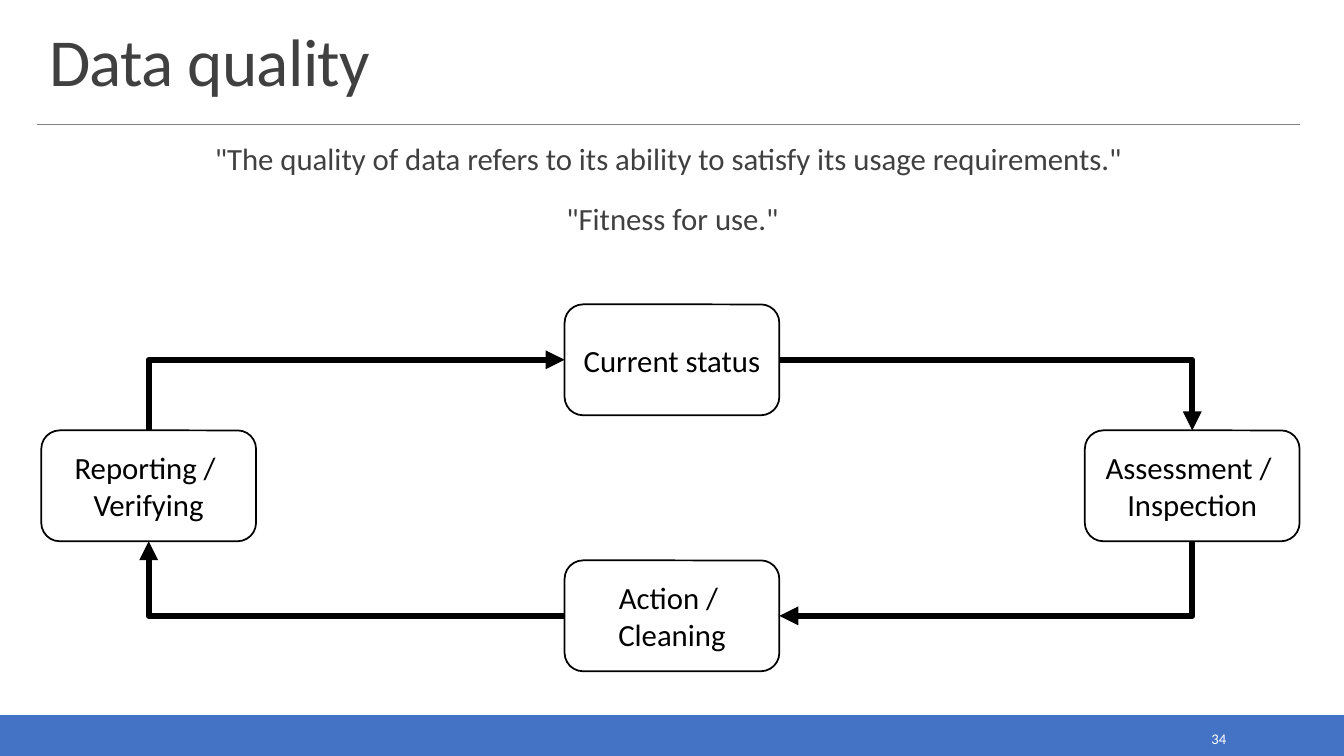
from pptx import Presentation
from pptx.dml.color import RGBColor
from pptx.enum.shapes import MSO_CONNECTOR, MSO_SHAPE
from pptx.enum.text import MSO_ANCHOR, PP_ALIGN
from pptx.oxml.ns import qn
from pptx.util import Inches, Pt
from lxml import etree

ELBOW, STRAIGHT = MSO_CONNECTOR.ELBOW, MSO_CONNECTOR.STRAIGHT
RECT, ROUND_RECT = MSO_SHAPE.RECTANGLE, MSO_SHAPE.ROUNDED_RECTANGLE
CENTER, LEFT, RIGHT = PP_ALIGN.CENTER, PP_ALIGN.LEFT, PP_ALIGN.RIGHT
TOP, MIDDLE, BOTTOM = MSO_ANCHOR.TOP, MSO_ANCHOR.MIDDLE, MSO_ANCHOR.BOTTOM

FONT = "Calibri"
BLACK = RGBColor(0, 0, 0)
WHITE = RGBColor(0xFF, 0xFF, 0xFF)
DARK = RGBColor(0x40, 0x40, 0x40)
GRAY = RGBColor(0x80, 0x80, 0x80)
BLUE = RGBColor(0x44, 0x72, 0xC4)

SLIDE_W, SLIDE_H = 13.33, 7.5
BOX_W, BOX_H = 2.13, 1.1
SITE_TOP, SITE_LEFT, SITE_BOTTOM, SITE_RIGHT = range(4)


def write(sp, text, size, color, align, anchor):
    """Fill a shape with one paragraph; newlines become line breaks."""
    tf = sp.text_frame
    tf.word_wrap = True
    tf.vertical_anchor = anchor
    p = tf.paragraphs[0]
    p.alignment = align
    for i, line in enumerate(text.split("\n")):
        if i:
            p.add_line_break()
        r = p.add_run()
        r.text = line
        r.font.name, r.font.size = FONT, Pt(size)
        r.font.color.rgb = color
    return p


def add_text(s, box, text, size, color, align, anchor):
    tb = s.shapes.add_textbox(*map(Inches, box))
    return tb, write(tb, text, size, color, align, anchor)


def add_line(s, kind, color, width, ends=(0, 0, 0, 0)):
    c = s.shapes.add_connector(kind, *map(Inches, ends))
    c.line.color.rgb, c.line.width = color, Pt(width)
    etree.SubElement(c.element.spPr, qn("a:effectLst"))
    return c


def add_header(s, x, y, w, h):
    _, p = add_text(s, (x, y, w, h), "Data quality", 48, DARK, LEFT, BOTTOM)
    p.line_spacing = 0.85
    p.runs[0].font._element.set("spc", "-50")
    add_line(s, STRAIGHT, GRAY, 0.5, (0.37, 1.23, 12.89, 1.23))


def add_quote(s, x, y, text):
    tb, p = add_text(s, (x, y, 12.52, 0.47), text, 22, DARK, CENTER, TOP)
    tf = tb.text_frame
    tf.margin_left = tf.margin_right = 0
    tf.margin_top = tf.margin_bottom = Inches(0.04)
    p.line_spacing = 0.9
    p.space_before, p.space_after = Pt(12), Pt(2)


def add_step(s, x, y, text):
    sp = s.shapes.add_shape(ROUND_RECT, *map(Inches, (x, y, BOX_W, BOX_H)))
    sp.shadow.inherit = False
    sp.fill.background()
    sp.line.color.rgb, sp.line.width = BLACK, Pt(1.25)
    write(sp, text, 22, BLACK, CENTER, MIDDLE)
    return sp


def add_arrow(s, start, start_site, end, end_site):
    """Join two steps by an arrow with a single right-angled bend."""
    c = add_line(s, ELBOW, BLACK, 4.5)
    c.begin_connect(start, start_site)
    c.end_connect(end, end_site)
    spPr = c.element.spPr
    spPr.find(qn("a:prstGeom")).set("prst", "bentConnector2")
    if start_site in (SITE_TOP, SITE_BOTTOM):
        # The preset leaves sideways, so a vertical start needs a quarter turn.
        dx, dy = c.end_x - c.begin_x, c.end_y - c.begin_y
        mid_x, mid_y = c.begin_x + dx // 2, c.begin_y + dy // 2
        c.begin_x, c.begin_y = mid_x - dy // 2, mid_y + dx // 2
        c.end_x, c.end_y = mid_x + dy // 2, mid_y - dx // 2
        spPr.find(qn("a:xfrm")).set("rot", "5400000")
    ln = c.line._get_or_add_ln()
    etree.SubElement(ln, qn("a:tailEnd"), type="triangle")


def add_cycle(s, x, y, w, h):
    mid_x, right = (SLIDE_W - BOX_W) / 2, x + w - BOX_W
    side_y = y + 1.25
    reporting = add_step(s, x, side_y, "Reporting / \nVerifying")
    status = add_step(s, mid_x, y, "Current status")
    assessment = add_step(s, right, side_y, "Assessment / \nInspection")
    action = add_step(s, mid_x, y + h - BOX_H, "Action / \nCleaning")
    add_arrow(s, reporting, SITE_TOP, status, SITE_LEFT)
    add_arrow(s, status, SITE_RIGHT, assessment, SITE_TOP)
    add_arrow(s, action, SITE_LEFT, reporting, SITE_BOTTOM)
    add_arrow(s, assessment, SITE_BOTTOM, action, SITE_RIGHT)


def add_footer(s, x, y, w, h):
    bar = s.shapes.add_shape(RECT, *map(Inches, (x, y, w, h)))
    bar.shadow.inherit = False
    bar.fill.solid()
    bar.fill.fore_color.rgb = BLUE
    bar.line.color.rgb, bar.line.width = BLUE, Pt(1.25)
    add_text(s, (x + 10.83, y + 0.09, 1.43, 0.28), "34", 10.5, WHITE, RIGHT, MIDDLE)


def main():
    prs = Presentation()
    prs.slide_width, prs.slide_height = Inches(SLIDE_W), Inches(SLIDE_H)
    s = prs.slides.add_slide(prs.slide_layouts[6])
    add_footer(s, 0, 7.1, SLIDE_W, 0.4)
    add_header(s, 0.39, 0.2, 12.52, 0.84)
    add_quote(s, 0.37, 1.39,
              '"The quality of data refers to its ability to satisfy its usage requirements."')
    add_quote(s, 0.41, 1.98, '"Fitness for use."')
    add_cycle(s, 0.41, 3.02, 12.48, 3.64)
    prs.save("out.pptx")


if __name__ == "__main__":
    main()
